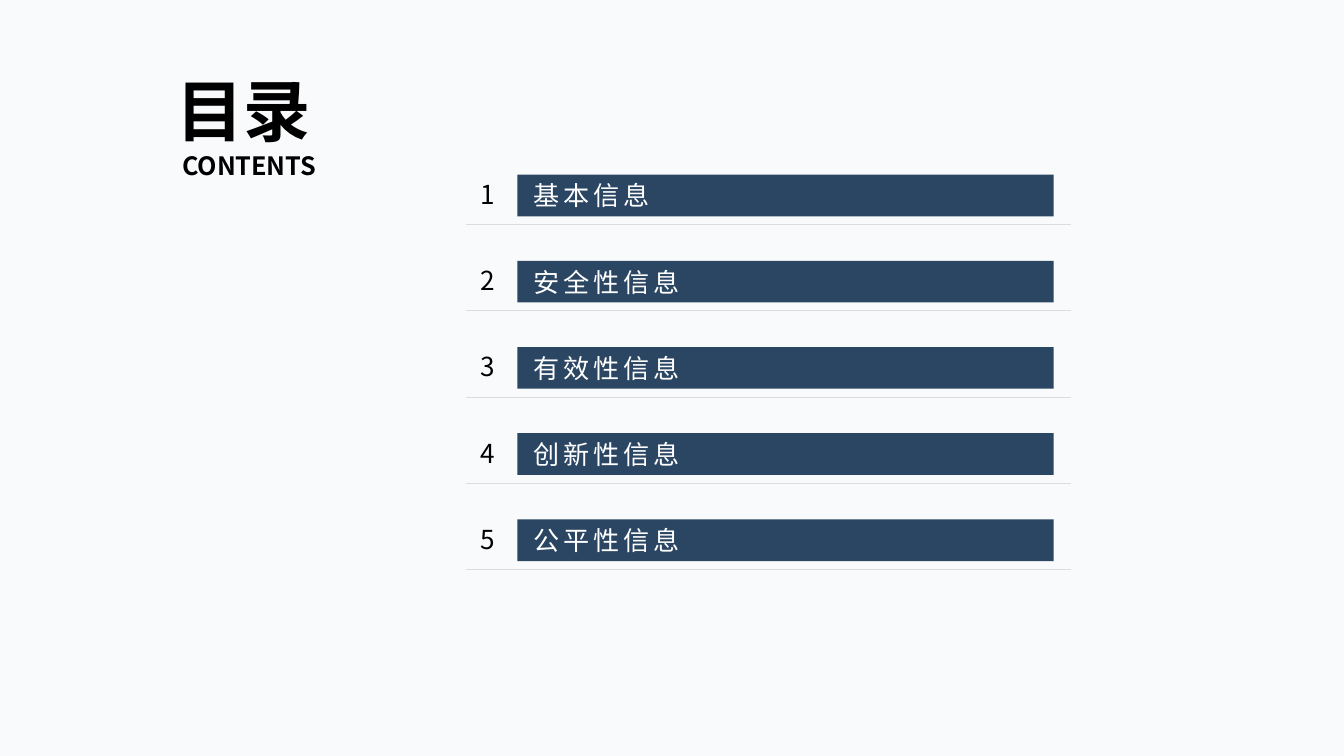
from dataclasses import dataclass

from lxml import etree
from pptx import Presentation
from pptx import util as u
from pptx.dml.color import RGBColor
from pptx.enum import shapes, text
from pptx.oxml.ns import qn

SLIDE_WIDTH = 10
SLIDE_HEIGHT = SLIDE_WIDTH * 9 / 16
FONT = "Noto Sans CJK SC"
BACKGROUND = RGBColor(0xF9, 0xFA, 0xFB)
NAVY = RGBColor(0x2B, 0x46, 0x63)
RULE_GREY = RGBColor(0xDD, 0xDD, 0xDD)
BLACK = RGBColor(0, 0, 0)
WHITE = RGBColor(0xFF, 0xFF, 0xFF)

TOPICS = ("基本信息", "安全性信息", "有效性信息", "创新性信息", "公平性信息")
FIRST_ROW = 1.22
ROW_PITCH = SLIDE_HEIGHT * 11.4 / 100
TITLE_SIZE, SUBTITLE_SIZE = 36, 13.5
LEADING = 1.2


@dataclass(frozen=True)
class Area:
    left: float
    top: float
    width: float
    height: float

    def row(self, index: int) -> "Area":
        """The same area moved down to the given row of the list."""
        return Area(self.left, FIRST_ROW + index * ROW_PITCH + self.top, self.width, self.height)

    def lengths(self) -> tuple:
        return tuple(u.Inches(n) for n in (self.left, self.top, self.width, self.height))


# Columns of the list; tops are measured from the top of a row.
NUMBER = Area(3.44, 0, 0.38, 0.45)
BAR = Area(3.85, 0.08, 3.99, 0.31)
RULE = Area(3.47, 0.45, 4.5, 0)
HEADING = Area(1.05, 0.51, 1.61, 0.84)


def set_frame(shape, left_inset: float = 0):
    frame = shape.text_frame
    frame.word_wrap = True
    frame.vertical_anchor = text.MSO_ANCHOR.MIDDLE
    frame.margin_left = u.Inches(left_inset)
    frame.margin_right = frame.margin_top = frame.margin_bottom = 0
    return frame


def add_span(para, words: str, size: float, color: RGBColor, bold: bool = False,
             spacing: float = 0) -> None:
    """Add one run; spacing is the gap between letters in points."""
    span = para.add_run()
    span.text = words
    font = span.font
    font.name, font.size, font.bold = FONT, u.Pt(size), bold
    font.color.rgb = color
    properties = span._r.get_or_add_rPr()
    if spacing:
        properties.set("spc", str(round(spacing * 100)))
    east_asian = etree.SubElement(properties, qn("a:ea"))
    east_asian.set("typeface", FONT)


def add_number(page, index: int) -> None:
    box = page.shapes.add_textbox(*NUMBER.row(index).lengths())
    para = set_frame(box).paragraphs[0]
    para.alignment = text.PP_ALIGN.CENTER
    add_span(para, str(index + 1), 14, BLACK)


def add_bar(page, index: int, topic: str) -> None:
    bar = page.shapes.add_shape(shapes.MSO_SHAPE.RECTANGLE, *BAR.row(index).lengths())
    bar.shadow.inherit = False
    bar.fill.solid()
    bar.fill.fore_color.rgb = NAVY
    bar.line.fill.background()
    para = set_frame(bar, left_inset=0.12).paragraphs[0]
    para.alignment = text.PP_ALIGN.LEFT
    add_span(para, topic, 14, WHITE, spacing=2)


def add_rule(page, index: int) -> None:
    left, top, width, _ = RULE.row(index).lengths()
    rule = page.shapes.add_connector(shapes.MSO_CONNECTOR.STRAIGHT, left, top, left + width, top)
    rule.line.color.rgb = RULE_GREY
    rule.line.width = u.Pt(0.25)
    etree.SubElement(rule._element.spPr, qn("a:effectLst"))


def add_heading(page) -> None:
    frame = set_frame(page.shapes.add_textbox(*HEADING.lengths()))
    title, subtitle = frame.paragraphs[0], frame.add_paragraph()
    for para, size in ((title, TITLE_SIZE), (subtitle, SUBTITLE_SIZE)):
        para.alignment = text.PP_ALIGN.CENTER
        para.line_spacing = u.Pt(size * LEADING)
    add_span(title, "目录", TITLE_SIZE, BLACK, bold=True)
    add_span(title, " ", 27, BLACK, bold=True)
    add_span(subtitle, "CONTENTS", SUBTITLE_SIZE, BLACK, bold=True)


def main() -> None:
    deck = Presentation()
    deck.slide_width, deck.slide_height = u.Inches(SLIDE_WIDTH), u.Inches(SLIDE_HEIGHT)
    page = deck.slides.add_slide(deck.slide_layouts[6])
    page.background.fill.solid()
    page.background.fill.fore_color.rgb = BACKGROUND
    for index, topic in enumerate(TOPICS):
        add_number(page, index)
        add_bar(page, index, topic)
        add_rule(page, index)
    add_heading(page)
    deck.save("out.pptx")


if __name__ == "__main__":
    main()
